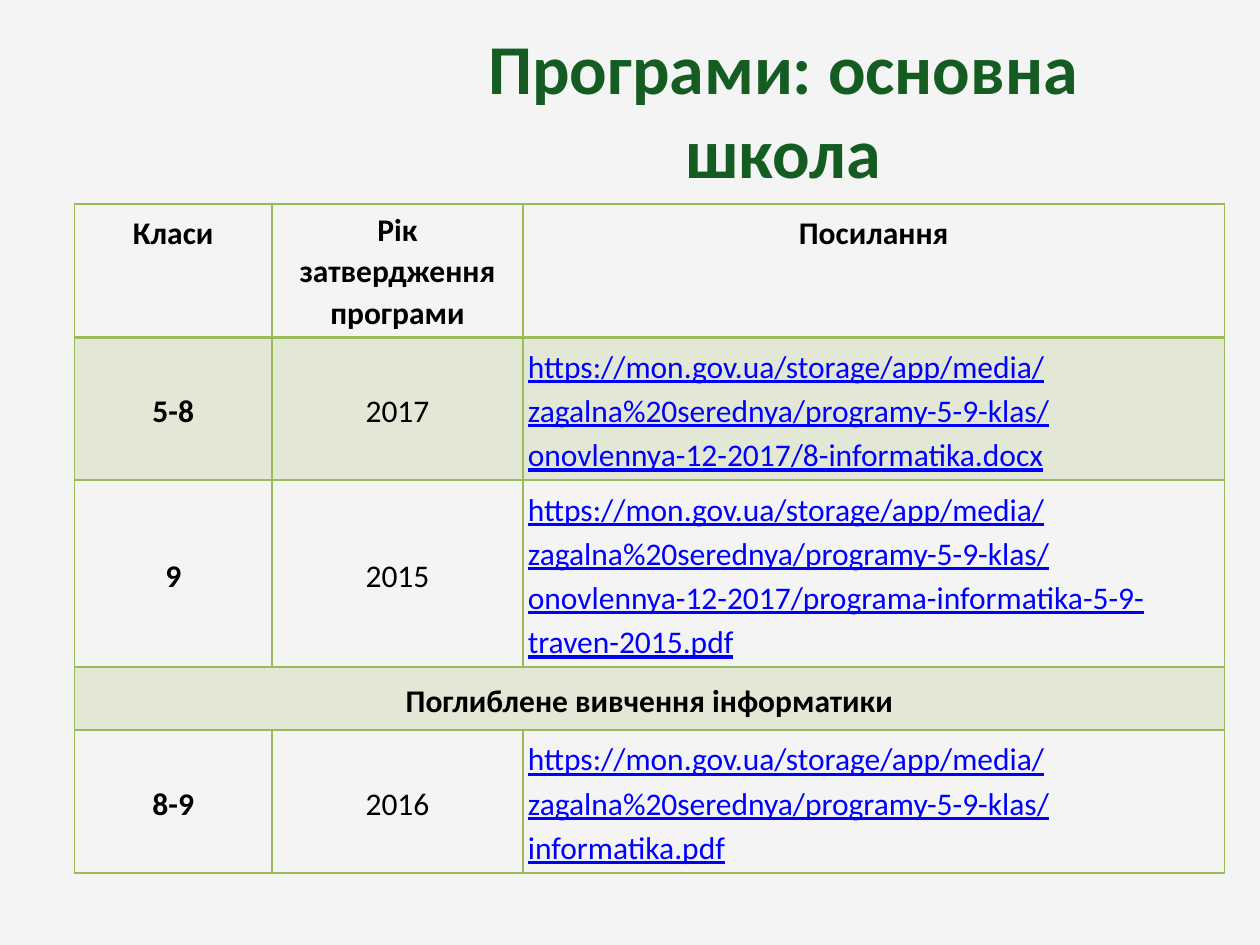
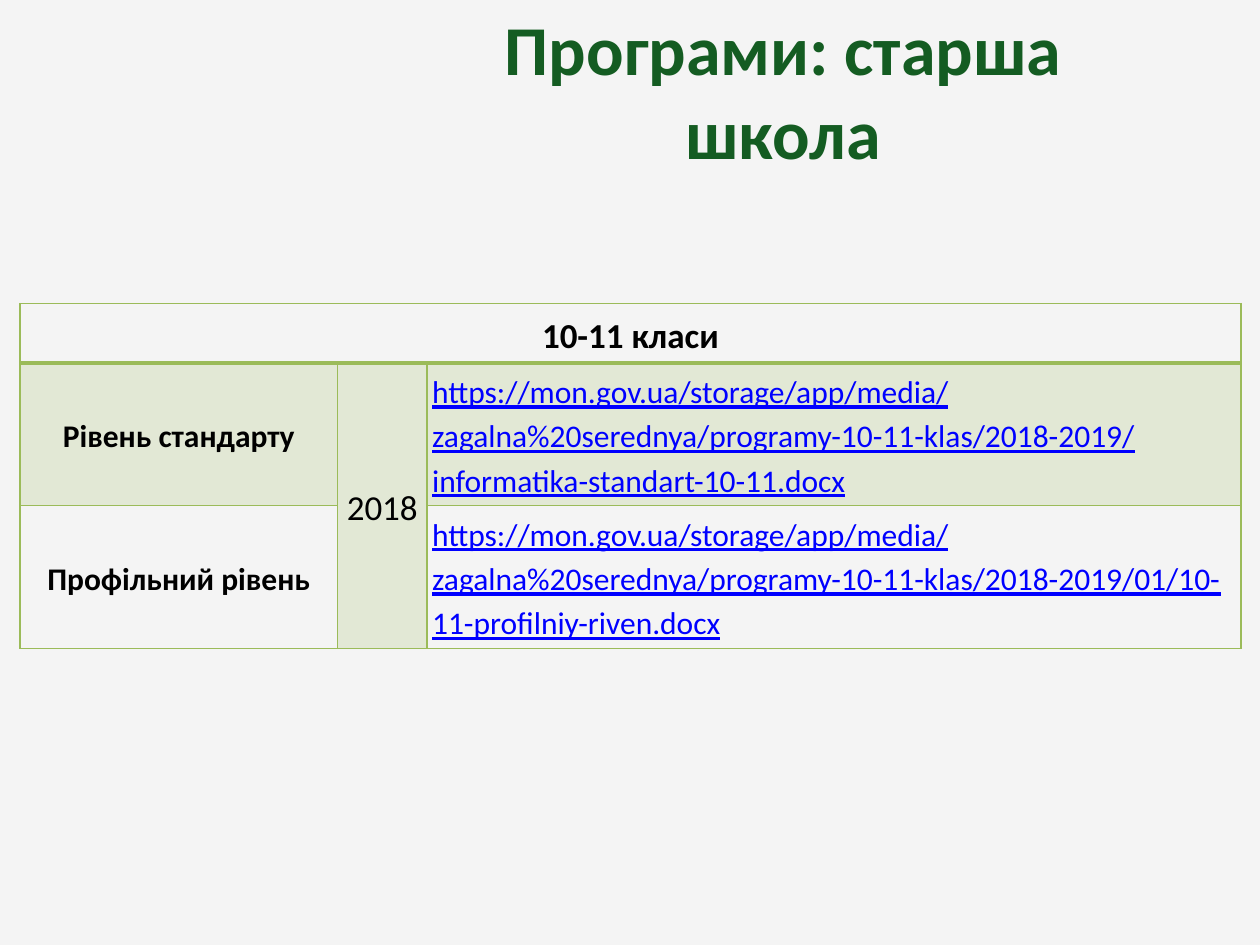
import pptx
import pptx.dml.color
import pptx.enum.text
import pptx.oxml
import pptx.oxml.ns
import pptx.util
from pptx.util import Inches

BACKGROUND = "F4F4F4"
TITLE_GREEN = "145C22"
BORDER_GREEN = "9BBB59"
BAND_GREEN = "E2E8D5"
TEXT_BLACK = "000000"
LINK_BLUE = "0000FF"
FONT = "Calibri"
MEDIA = "https://mon.gov.ua/storage/app/media/zagalna%20serednya/"
ALIGN = pptx.enum.text.PP_ALIGN
ANCHOR = pptx.enum.text.MSO_ANCHOR


def color(hex_string):
    return pptx.dml.color.RGBColor.from_string(hex_string)


def set_borders(cell, top, bottom):
    """Outline a cell; top and bottom widths are in points."""
    properties = cell._tc.get_or_add_tcPr()
    sides = [("lnL", 1), ("lnR", 1), ("lnT", top), ("lnB", bottom)]
    for position, (side, width) in enumerate(sides):
        line = pptx.oxml.parse_xml(
            f'<a:{side} {pptx.oxml.ns.nsdecls("a")} w="{pptx.util.Pt(width)}">'
            f'<a:solidFill><a:srgbClr val="{BORDER_GREEN}"/></a:solidFill></a:{side}>')
        properties.insert(position, line)


# Content: merges are (first row, first column, last row, last column)
programs = [
    {
        "title": "Програми: основна школа",
        "title_top": -0.27,
        "frame": (0.59, 1.62, 9.13, 4.79),
        "columns": [1.57, 1.99, 5.57],
        "heights": [0.94, 1.06, 1.28, 0.5, 0.89],
        "merges": [(3, 0, 3, 2)],
        "top_anchored_header": True,
        "large_cells": [],
        "rows": [
            ["Класи", "Рік затвердження програми", "Посилання"],
            ["5-8", "2017", MEDIA + "programy-5-9-klas/onovlennya-12-2017/8-informatika.docx"],
            ["9", "2015", MEDIA + "programy-5-9-klas/onovlennya-12-2017/"
                                  "programa-informatika-5-9-traven-2015.pdf"],
            ["Поглиблене вивчення інформатики", "", ""],
            ["8-9", "2016", MEDIA + "programy-5-9-klas/informatika.pdf"],
        ],
    },
    {
        "title": "Програми: старша школа",
        "title_top": -0.42,
        "frame": (0.16, 2.41, 9.69, 2.37),
        "columns": [2.52, 0.71, 6.46],
        "heights": [0.45, 0.8, 0.8],
        "merges": [(0, 0, 0, 2), (1, 1, 2, 1)],
        "top_anchored_header": False,
        "large_cells": ["10-11 класи", "2018"],
        "rows": [
            ["10-11 класи", "", ""],
            ["Рівень стандарту", "2018",
             MEDIA + "programy-10-11-klas/2018-2019/informatika-standart-10-11.docx"],
            ["Профільний рівень", "",
             MEDIA + "programy-10-11-klas/2018-2019/01/10-11-profilniy-riven.docx"],
        ],
    },
]

presentation = pptx.Presentation()
presentation.slide_width = Inches(10)
presentation.slide_height = Inches(7.5)

for program in programs:
    slide = presentation.slides.add_slide(presentation.slide_layouts[5])
    slide.background.fill.solid()
    slide.background.fill.fore_color.rgb = color(BACKGROUND)

    # Title
    title = slide.shapes.title
    title.left, title.top = Inches(3.5), Inches(program["title_top"])
    title.width, title.height = Inches(5.43), Inches(2.26)
    title.text_frame.text = program["title"]
    title.text_frame.auto_size = pptx.enum.text.MSO_AUTO_SIZE.NONE
    title.text_frame.vertical_anchor = ANCHOR.MIDDLE
    paragraph = title.text_frame.paragraphs[0]
    paragraph.alignment = ALIGN.CENTER
    font = paragraph.runs[0].font
    font.name, font.size, font.bold = FONT, pptx.util.Pt(40), True
    font.color.rgb = color(TITLE_GREEN)

    # Table grid
    rows = program["rows"]
    frame = slide.shapes.add_table(len(rows), 3, *map(Inches, program["frame"]))
    table = frame.table
    table.first_row = table.horz_banding = False
    for column, width in zip(table.columns, program["columns"]):
        column.width = Inches(width)
    for row, height in zip(table.rows, program["heights"]):
        row.height = Inches(height)
    frame.height = Inches(program["frame"][3])
    for first_row, first_column, last_row, last_column in program["merges"]:
        table.cell(first_row, first_column).merge(table.cell(last_row, last_column))

    # Cells: odd rows are banded, the last column holds the links
    for row_index, texts in enumerate(rows):
        for column_index, text in enumerate(texts):
            cell = table.cell(row_index, column_index)
            is_header = row_index == 0
            is_link = text.startswith("https")
            cell.margin_left = cell.margin_right = Inches(0.04)
            cell.margin_top = cell.margin_bottom = Inches(0.04)
            if row_index % 2:
                cell.fill.solid()
                cell.fill.fore_color.rgb = color(BAND_GREEN)
            else:
                cell.fill.background()
            set_borders(cell, 2 if row_index == 1 else 1, 2 if is_header else 1)
            if not text:
                continue

            at_top = is_link or (is_header and program["top_anchored_header"])
            cell.vertical_anchor = ANCHOR.TOP if at_top else ANCHOR.MIDDLE
            cell.text_frame.text = text
            paragraph = cell.text_frame.paragraphs[0]
            paragraph.alignment = ALIGN.JUSTIFY if is_link else ALIGN.CENTER
            paragraph.line_spacing = 1.07 if is_header and column_index == 1 else 1.15
            font = paragraph.runs[0].font
            font.name = FONT
            font.size = pptx.util.Pt(20 if text in program["large_cells"] else 18)
            font.bold = is_header or column_index == 0
            font.underline = is_link
            font.color.rgb = color(LINK_BLUE if is_link else TEXT_BLACK)

presentation.save("out.pptx")
